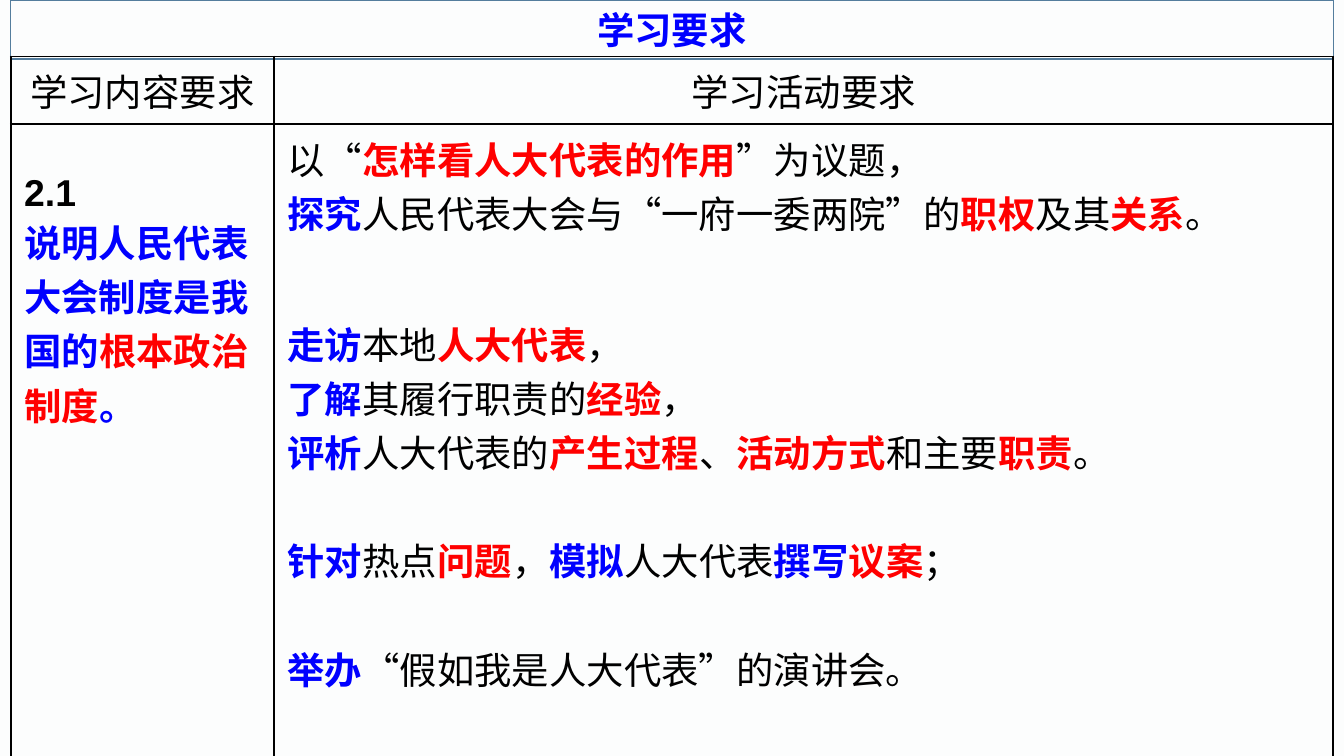
from lxml.etree import SubElement as sub
from pptx import Presentation
from pptx.dml.color import RGBColor as RGB
from pptx.enum.text import MSO_ANCHOR as ANCHOR, MSO_AUTO_SIZE as AUTO, PP_ALIGN as ALIGN
from pptx.oxml.ns import qn
from pptx.util import Inches, Pt

COLORS = {"back": "FCFDFD", "edge": "547D9D", "black": "000000",
          "blue": "0000FF", "red": "FF0000"}
SANS, CJK = "Arial", "Noto Sans CJK SC"
LEFT, WIDTH = 0.08, 9.84

# Each paragraph: space before in points, then (colour, text) runs
GOAL = [
    (0, [("black", "2.1")]),
    (0, [("blue", "说明人民代表大会制度是我国的"), ("red", "根本政治制度"),
         ("blue", "。 ")]),
]
TASKS = [
    (0, [("black", "以“"), ("red", "怎样看人大代表的作用"), ("black", "”为议题，")]),
    (0, [("blue", "探究"), ("black", "人民代表大会与“一府一委两院”的"),
         ("red", "职权"), ("black", "及其"), ("red", "关系"), ("black", "。")]),
    (41, [("blue", "走访"), ("black", "本地"), ("red", "人大代表"), ("black", "，")]),
    (0, [("blue", "了解"), ("black", "其履行职责的"), ("red", "经验"), ("black", "，")]),
    (0, [("blue", "评析"), ("black", "人大代表的"), ("red", "产生过程"),
         ("black", "、"), ("red", "活动方式"), ("black", "和主要"),
         ("red", "职责"), ("black", "。")]),
    (29, [("blue", "针对"), ("black", "热点"), ("red", "问题"), ("black", "，"),
          ("blue", "模拟"), ("black", "人大代表"), ("blue", "撰写"),
          ("red", "议案"), ("black", "；")]),
    (29, [("blue", "举办"), ("black", "“假如我是人大代表”的演讲会。")]),
]


def color(name):
    return RGB.from_string(COLORS[name])


def style(run, name, bold, face=CJK):
    font = run.font
    font.size, font.bold, font.name = Pt(20), bold, face
    font.color.rgb = color(name)
    # East Asian face follows the Latin one
    east = sub(run._r.rPr, qn("a:ea"), typeface=CJK)
    run._r.rPr.find(qn("a:latin")).addnext(east)


def add_title(slide, text):
    title = slide.shapes.title
    title.left, title.top = Inches(LEFT), Inches(0)
    title.width, title.height = Inches(WIDTH), Inches(0.44)
    title.line.color.rgb = color("edge")
    title.line.width = Pt(0.75)
    frame = title.text_frame
    frame.text = text
    frame.auto_size = AUTO.NONE
    frame.vertical_anchor = ANCHOR.MIDDLE
    para = frame.paragraphs[0]
    para.alignment = ALIGN.CENTER
    style(para.runs[0], "blue", True)


def frame_cell(cell):
    props = cell._tc.get_or_add_tcPr()
    for side in ("lnL", "lnR", "lnT", "lnB"):
        line = sub(props, qn(f"a:{side}"), w=str(Pt(1)))
        sub(sub(line, qn("a:solidFill")), qn("a:srgbClr"), val=COLORS["black"])
    cell.fill.background()


def fill_head(cell, text):
    cell.text_frame.text = text
    para = cell.text_frame.paragraphs[0]
    para.alignment = ALIGN.CENTER
    style(para.runs[0], "black", False, SANS)


def fill_body(cell, paras):
    frame = cell.text_frame
    for i, (gap, parts) in enumerate(paras):
        para = frame.paragraphs[0] if i == 0 else frame.add_paragraph()
        if gap:
            para.space_before = Pt(gap)
        for name, text in parts:
            run = para.add_run()
            run.text = text
            style(run, name, name != "black")


def add_grid(slide):
    table = slide.shapes.add_table(2, 2, Inches(LEFT), Inches(0.42),
                                   Inches(WIDTH), Inches(5.2)).table
    table.first_row = table.horz_banding = False
    for col, size in zip(table.columns, (1.96, 7.88)):
        col.width = Inches(size)
    for row, size in zip(table.rows, (0.5, 4.75)):
        row.height = Inches(size)
    for cell in table.iter_cells():
        frame_cell(cell)
    fill_head(table.cell(0, 0), "学习内容要求")
    fill_head(table.cell(0, 1), "学习活动要求")
    fill_body(table.cell(1, 0), GOAL)
    fill_body(table.cell(1, 1), TASKS)

    # The item number is the only bold black text, on a double line
    para = table.cell(1, 0).text_frame.paragraphs[0]
    para.line_spacing = 2.0
    para.runs[0].font.bold = True
    para.runs[0].font.name = SANS


def main():
    deck = Presentation()
    # Widescreen, 16 to 9
    deck.slide_width, deck.slide_height = Inches(10), Inches(10 * 9 / 16)
    slide = deck.slides.add_slide(deck.slide_layouts[5])
    slide.background.fill.solid()
    slide.background.fill.fore_color.rgb = color("back")
    add_title(slide, "学习要求")
    add_grid(slide)
    deck.save("out.pptx")


if __name__ == "__main__":
    main()
